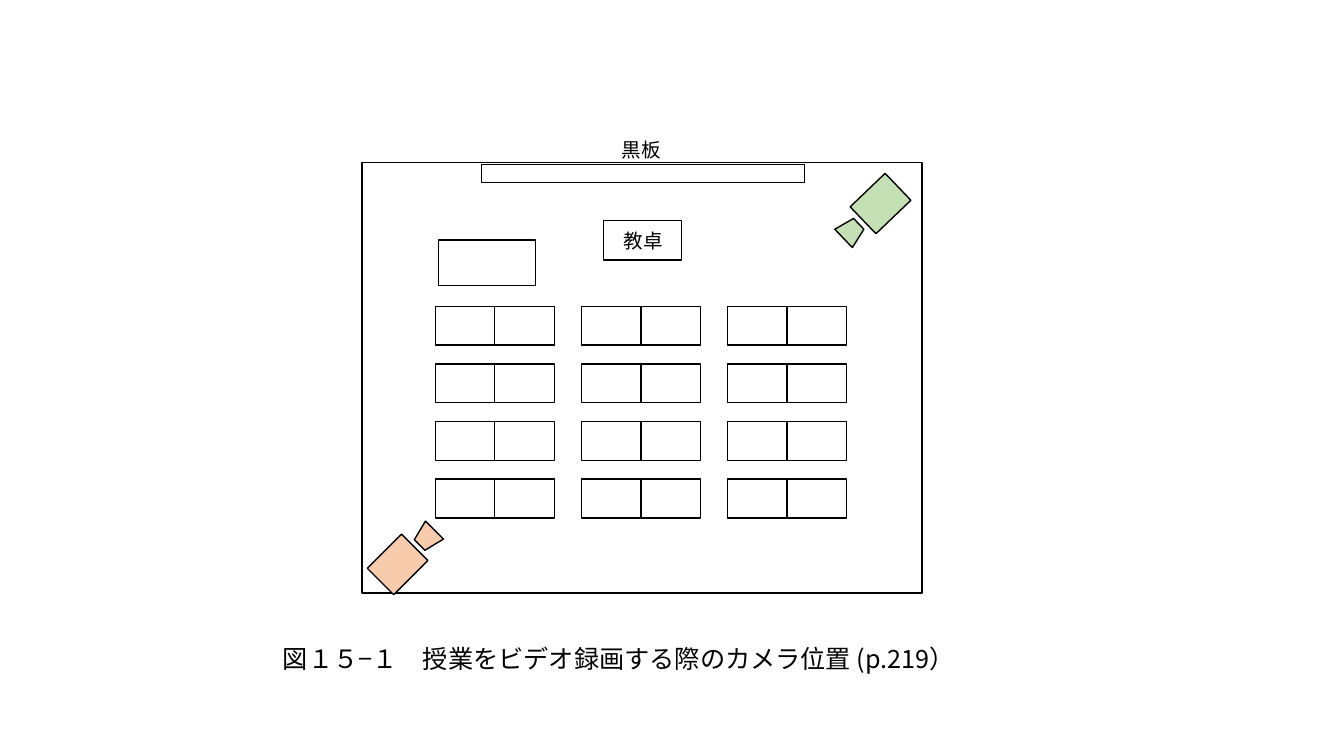
"""Draw a classroom plan with two video camera positions."""
from lxml.etree import SubElement
from pptx import Presentation
from pptx.dml.color import RGBColor
from pptx.enum.shapes import MSO_SHAPE as Shape
from pptx.enum.text import MSO_AUTO_SIZE as AutoSize
from pptx.oxml.ns import qn
from pptx.util import Cm, Pt

BLACK = RGBColor(0x00, 0x00, 0x00)
WHITE = RGBColor(0xFF, 0xFF, 0xFF)
GREEN = RGBColor(0xC5, 0xE0, 0xB4)
ORANGE = RGBColor(0xF8, 0xCB, 0xAD)
FONT = "Noto Sans CJK JP"

DESK_WIDTH, DESK_HEIGHT = 1.5, 0.98
DESKS_LEFT, DESKS_TOP = 10.97, 7.72
COLUMN_PITCH, ROW_PITCH = 3.68, 1.45
COLUMNS, ROWS = 3, 4


def add_outline(shapes, left, top, width, height, fill=None, kind=Shape.RECTANGLE, angle=0):
    """Add a black-lined shape, hollow unless a fill is given."""
    shape = shapes.add_shape(kind, Cm(left), Cm(top), Cm(width), Cm(height))
    shape.shadow.inherit = False
    shape.rotation = angle
    shape.line.color.rgb = BLACK
    shape.line.width = Pt(1)
    if fill is None:
        shape.fill.background()
    else:
        shape.fill.solid()
        shape.fill.fore_color.rgb = fill


def add_desk_pair(page, left, top):
    """Add two desks side by side as one group."""
    pair = page.shapes.add_group_shape()
    for seat in range(2):
        add_outline(pair.shapes, left + seat * DESK_WIDTH, top, DESK_WIDTH, DESK_HEIGHT, WHITE)


def add_camera(page, body, lens, angle, fill):
    """Add a camera from the corners of its body and lens."""
    camera = page.shapes.add_group_shape()
    add_outline(camera.shapes, *body, 0.94, 1.22, fill, angle=angle)
    add_outline(camera.shapes, *lens, 0.64, 0.53, fill, Shape.TRAPEZOID, angle)


def add_label(page, text, left, top, width, height, size):
    """Add one unwrapped line of text."""
    box = page.shapes.add_textbox(Cm(left), Cm(top), Cm(width), Cm(height))
    frame = box.text_frame
    frame.text = text
    frame.word_wrap = False
    frame.auto_size = AutoSize.SHAPE_TO_FIT_TEXT
    span = frame.paragraphs[0].runs[0]
    span.font.size = Pt(size)
    span.font.color.rgb = BLACK
    span.font.name = FONT
    SubElement(span.font._element, qn("a:ea"), typeface=FONT)


def main():
    """Build the slide and save it."""
    deck = Presentation()
    deck.slide_width, deck.slide_height = Cm(33.87), Cm(19.05)
    page = deck.slides.add_slide(deck.slide_layouts[6])

    for column in range(COLUMNS):
        for row in range(ROWS):
            add_desk_pair(page, DESKS_LEFT + column * COLUMN_PITCH, DESKS_TOP + row * ROW_PITCH)

    room = (9.12, 4.09, 14.12, 10.85)
    teacher_desk = (15.21, 5.56, 1.96, 0.99)
    blackboard = (12.14, 4.14, 8.13, 0.46)
    side_desk = (11.05, 6.05, 2.44, 1.14)
    for bounds in (room, teacher_desk, blackboard, side_desk):
        add_outline(page.shapes, *bounds)

    add_label(page, "黒板", 15.42, 3.35, 1.5, 0.86, 14)
    add_label(page, "教卓", 15.47, 5.64, 1.5, 0.86, 14)
    add_camera(page, (21.72, 4.52), (21.13, 5.56), 46.2, GREEN)
    add_camera(page, (9.55, 13.61), (10.44, 13.28), 225, ORANGE)
    add_label(page, "図１５−１　授業をビデオ録画する際のカメラ位置 (p.219）", 6.88, 16.08, 17.93, 1.02, 18)
    deck.save("out.pptx")


if __name__ == "__main__":
    main()
